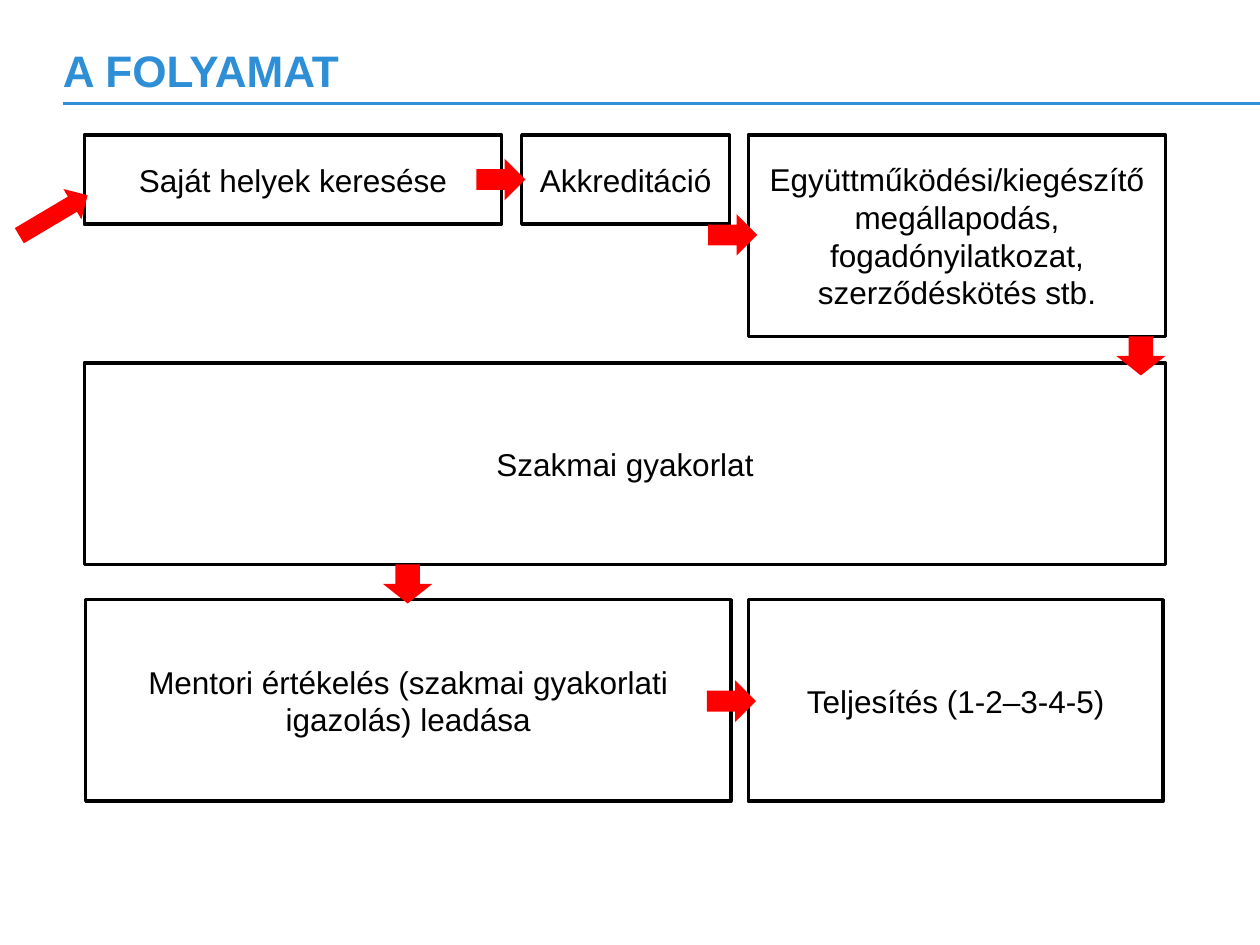
import pptx
import pptx.util
import pptx.dml.color
import pptx.enum.shapes
import pptx.enum.text
import pptx.oxml
import pptx.oxml.ns

Inches, Pt = pptx.util.Inches, pptx.util.Pt
SHAPES = pptx.enum.shapes.MSO_SHAPE
ANCHOR_MIDDLE = pptx.enum.text.MSO_ANCHOR.MIDDLE
CENTER = pptx.enum.text.PP_ALIGN.CENTER

FONT = "Arial"
COLORS = {"accent": "2E8FD6", "box": "FFFFFF", "ink": "000000", "arrow": "FF0000"}
TITLE = "A FOLYAMAT"

# text, left, top, width, height
STEPS = [
    ("Saját helyek keresése", 0.67, 1.07, 3.31, 0.71),
    ("Akkreditáció", 4.14, 1.07, 1.65, 0.71),
    ("Együttműködési/kiegészítő megállapodás, fogadónyilatkozat, szerződéskötés stb.",
     5.94, 1.07, 3.31, 1.6),
    ("Szakmai gyakorlat", 0.67, 2.88, 8.58, 1.6),
    ("Mentori értékelés (szakmai gyakorlati igazolás) leadása", 0.68, 4.76, 5.12, 1.6),
    ("Teljesítés (1-2–3-4-5)", 5.94, 4.76, 3.29, 1.6),
]

RIGHT = (SHAPES.RIGHT_ARROW, 0.39, 0.33, 0)
DOWN = (SHAPES.DOWN_ARROW, 0.39, 0.31, 0)
ENTRY = (SHAPES.RIGHT_ARROW, 0.63, 0.28, 329.3)
# kind, left, top
ARROWS = [
    (RIGHT, 5.61, 5.4),
    (RIGHT, 3.78, 1.26),
    (RIGHT, 5.62, 1.7),
    (ENTRY, 0.11, 1.57),
    (DOWN, 8.86, 2.67),
    (DOWN, 3.04, 4.48),
]


def color(name):
    return pptx.dml.color.RGBColor.from_string(COLORS[name])


def set_text(shape, text, size, color_name, bold=False):
    frame = shape.text_frame
    frame.word_wrap = True
    frame.vertical_anchor = ANCHOR_MIDDLE
    paragraph = frame.paragraphs[0]
    paragraph.text = text
    font = paragraph.font
    font.name, font.size, font.bold = FONT, Pt(size), bold
    font.color.rgb = color(color_name)
    return paragraph


def add_filled_shape(slide, kind, box, fill):
    shape = slide.shapes.add_shape(kind, *map(Inches, box))
    shape.shadow.inherit = False
    shape.fill.solid()
    shape.fill.fore_color.rgb = color(fill)
    return shape


def add_header(slide):
    rule = slide.shapes.add_connector(
        pptx.enum.shapes.MSO_CONNECTOR.STRAIGHT,
        Inches(0.5), Inches(0.82), Inches(10), Inches(0.82))
    rule.line.color.rgb = color("accent")
    rule.line.width = Pt(1.5)
    properties = rule._element.find(pptx.oxml.ns.qn("p:spPr"))
    properties.append(pptx.oxml.parse_xml(
        f"<a:effectLst {pptx.oxml.ns.nsdecls('a')}/>"))

    title = slide.shapes.add_textbox(Inches(0.5), Inches(0.4), Inches(9), Inches(0.31))
    frame = title.text_frame
    frame.margin_left = frame.margin_top = frame.margin_right = frame.margin_bottom = 0
    set_text(title, TITLE, 25.2, "accent", bold=True)


def add_step(slide, text, *box):
    shape = add_filled_shape(slide, SHAPES.RECTANGLE, box, "box")
    shape.line.color.rgb = color("ink")
    shape.line.width = Pt(2)
    set_text(shape, text, 18, "ink").alignment = CENTER


def add_arrow(slide, style, left, top):
    kind, width, height, rotation = style
    arrow = add_filled_shape(slide, kind, (left, top, width, height), "arrow")
    arrow.line.fill.background()
    arrow.rotation = rotation


def main():
    presentation = pptx.Presentation()
    presentation.slide_width, presentation.slide_height = Inches(10), Inches(7.5)
    slide = presentation.slides.add_slide(presentation.slide_layouts[6])
    add_header(slide)
    for step in STEPS:
        add_step(slide, *step)
    for arrow in ARROWS:
        add_arrow(slide, *arrow)
    presentation.save("out.pptx")


if __name__ == "__main__":
    main()
